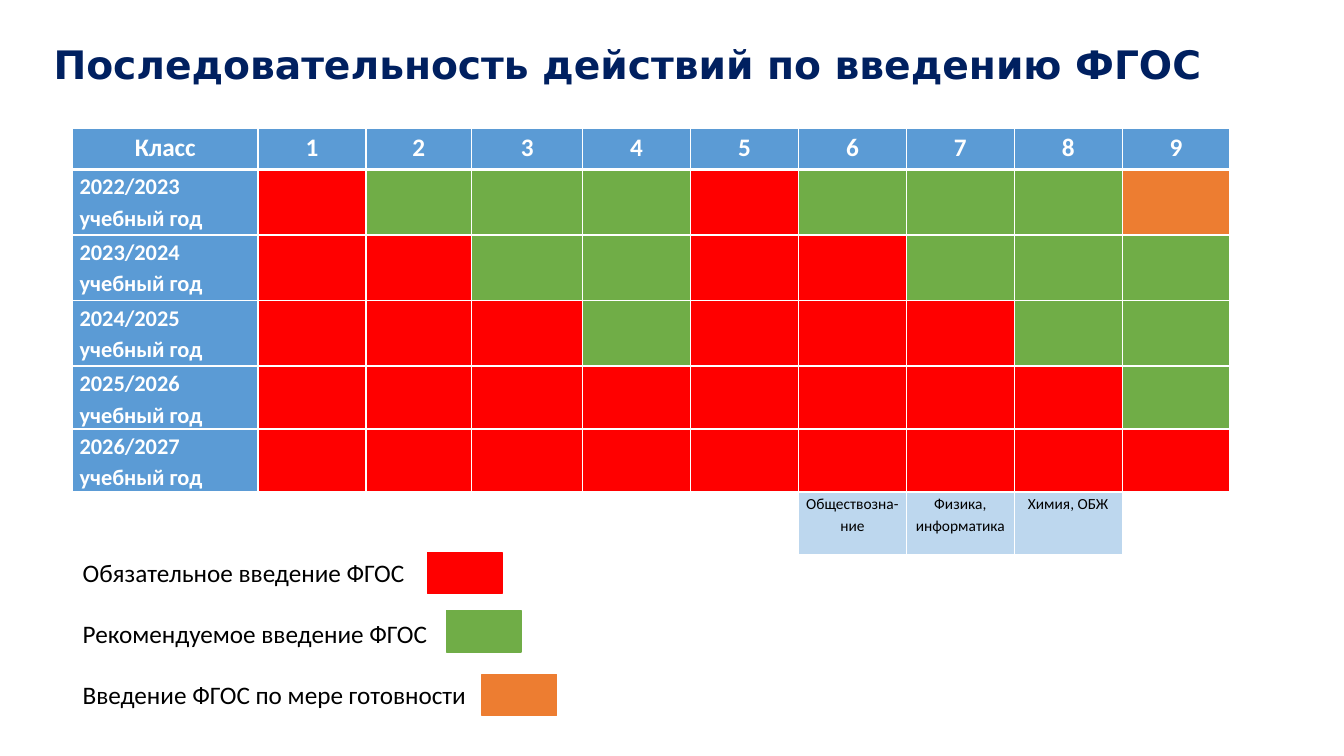
from dataclasses import dataclass

import lxml.etree
import pptx
import pptx.dml.color
import pptx.enum.shapes
import pptx.enum.text
import pptx.oxml.ns
import pptx.util

COLORS = {
    "navy": "002060",
    "header": "5B9BD5",
    "mandatory": "FF0000",
    "recommended": "70AD47",
    "readiness": "ED7D31",
    "subject": "BDD7EE",
    "white": "FFFFFF",
    "black": "000000",
}
SLIDE_WIDTH = pptx.util.Inches(13.33)
SLIDE_HEIGHT = pptx.util.Inches(7.5)
GRADES = range(1, 10)
YEARS = [f"{year}/{year + 1} учебный год" for year in range(2022, 2027)]
SUBJECTS = {6: "Обществозна-ние", 7: "Физика, информатика", 8: "Химия, ОБЖ"}
COLUMN_SHARES = [13.8, 8.03, 7.88, 8.25] + [8.03] * 6
ROW_SHARES = [5.5] + [8.67] * 3 + [8.27] * 3


@dataclass(frozen=True)
class Area:
    left: float
    top: float
    width: float
    height: float

    def emu(self) -> tuple[int, int, int, int]:
        return across(self.left), down(self.top), across(self.width), down(self.height)


@dataclass(frozen=True)
class LegendEntry:
    label: str
    color: str
    swatch: Area


@dataclass(frozen=True)
class TextStyle:
    size: float
    color: str
    bold: bool = False
    font: str = "Calibri"


@dataclass(frozen=True)
class CellContent:
    fill: str
    text: str = ""
    style: TextStyle = TextStyle(18, "white", True)
    centered: bool = True
    bottom_border: float = 1


TITLE_AREA = Area(3.23, 5.33, 93.7, 7.07)
TABLE_AREA = Area(5.4, 16.93, sum(COLUMN_SHARES), sum(ROW_SHARES))
LEGEND_AREA = Area(5.4, 73.07, 50.04, 21.6)
LEGEND = [
    LegendEntry("Обязательное введение ФГОС", "mandatory", Area(31.81, 73.07, 5.55, 5.47)),
    LegendEntry("Рекомендуемое введение ФГОС", "recommended", Area(33.23, 80.8, 5.55, 5.47)),
    LegendEntry("Введение ФГОС по мере готовности", "readiness", Area(35.86, 89.2, 5.55, 5.47)),
]


def across(share: float) -> int:
    return round(SLIDE_WIDTH * share / 100)


def down(share: float) -> int:
    return round(SLIDE_HEIGHT * share / 100)


def rgb(color: str) -> pptx.dml.color.RGBColor:
    return pptx.dml.color.RGBColor.from_string(COLORS[color])


def place(shape, area: Area) -> None:
    shape.left, shape.top, shape.width, shape.height = area.emu()


def style_paragraph(paragraph, style: TextStyle) -> None:
    paragraph.font.name = style.font
    paragraph.font.size = pptx.util.Pt(style.size)
    paragraph.font.bold = style.bold
    paragraph.font.color.rgb = rgb(style.color)


def add_border(cell, side: str, width: float) -> None:
    qn = pptx.oxml.ns.qn
    border = lxml.etree.SubElement(
        cell._tc.get_or_add_tcPr(), qn(f"a:ln{side}"), w=str(pptx.util.Pt(width))
    )
    fill = lxml.etree.SubElement(border, qn("a:solidFill"))
    lxml.etree.SubElement(fill, qn("a:srgbClr"), val=COLORS["white"])


def fill_cell(cell, content: CellContent) -> None:
    for side in "LRT":
        add_border(cell, side, 1)
    add_border(cell, "B", content.bottom_border)
    cell.fill.solid()
    cell.fill.fore_color.rgb = rgb(content.fill)
    if not content.text:
        return
    cell.margin_left = cell.margin_right = pptx.util.Inches(0.07)
    cell.margin_top = cell.margin_bottom = 0
    cell.text = content.text
    paragraph = cell.text_frame.paragraphs[0]
    align = pptx.enum.text.PP_ALIGN
    paragraph.alignment = align.CENTER if content.centered else align.LEFT
    paragraph.line_spacing = 1.15
    style_paragraph(paragraph, content.style)


def stage(year_index: int, grade: int) -> str:
    if grade <= year_index + 1 or 5 <= grade <= year_index + 5:
        return "mandatory"
    return "readiness" if (year_index, grade) == (0, 9) else "recommended"


def schedule() -> list[list[CellContent]]:
    header = [
        CellContent("header", label, bottom_border=3)
        for label in ["Класс", *map(str, GRADES)]
    ]
    year_style = TextStyle(16, "white", True)
    years = [
        [CellContent("header", year, year_style, centered=False)]
        + [CellContent(stage(index, grade)) for grade in GRADES]
        for index, year in enumerate(YEARS)
    ]
    subject_style = TextStyle(11, "black")
    subjects = [CellContent("white")] + [
        CellContent("subject", SUBJECTS[grade], subject_style)
        if grade in SUBJECTS
        else CellContent("white")
        for grade in GRADES
    ]
    return [header, *years, subjects]


def add_schedule(slide) -> None:
    rows = schedule()
    table = slide.shapes.add_table(len(rows), len(rows[0]), *TABLE_AREA.emu()).table
    for column, share in zip(table.columns, COLUMN_SHARES):
        column.width = across(share)
    for row, share, contents in zip(table.rows, ROW_SHARES, rows):
        row.height = down(share)
        for cell, content in zip(row.cells, contents):
            fill_cell(cell, content)


def write_title(title) -> None:
    place(title, TITLE_AREA)
    frame = title.text_frame
    frame.text = "Последовательность действий по введению ФГОС"
    frame.auto_size = pptx.enum.text.MSO_AUTO_SIZE.NONE
    frame.vertical_anchor = pptx.enum.text.MSO_ANCHOR.MIDDLE
    heading = frame.paragraphs[0]
    heading.alignment = pptx.enum.text.PP_ALIGN.LEFT
    heading.line_spacing = 0.9
    style_paragraph(heading, TextStyle(28, "navy", True, "DejaVu Sans"))


def write_legend(body) -> None:
    place(body, LEGEND_AREA)
    frame = body.text_frame
    frame.text = "\n".join(entry.label for entry in LEGEND)
    frame.auto_size = pptx.enum.text.MSO_AUTO_SIZE.NONE
    for index, paragraph in enumerate(frame.paragraphs):
        paragraph.space_before = pptx.util.Pt(22 if index else 0)
        properties = paragraph._p.get_or_add_pPr()
        properties.set("marL", "0")
        properties.set("indent", "0")
        lxml.etree.SubElement(properties, pptx.oxml.ns.qn("a:buNone"))
        style_paragraph(paragraph, TextStyle(18, "black"))


def add_swatch(slide, entry: LegendEntry) -> None:
    swatch = slide.shapes.add_shape(
        pptx.enum.shapes.MSO_SHAPE.RECTANGLE, *entry.swatch.emu()
    )
    swatch.shadow.inherit = False
    swatch.fill.solid()
    swatch.fill.fore_color.rgb = rgb(entry.color)
    swatch.line.color.rgb = rgb(entry.color)
    swatch.line.width = pptx.util.Pt(1)


def main() -> None:
    presentation = pptx.Presentation()
    presentation.slide_width = SLIDE_WIDTH
    presentation.slide_height = SLIDE_HEIGHT
    slide = presentation.slides.add_slide(presentation.slide_layouts[1])
    write_title(slide.shapes.title)
    add_schedule(slide)
    write_legend(slide.placeholders[1])
    for entry in LEGEND:
        add_swatch(slide, entry)
    presentation.save("out.pptx")


if __name__ == "__main__":
    main()
